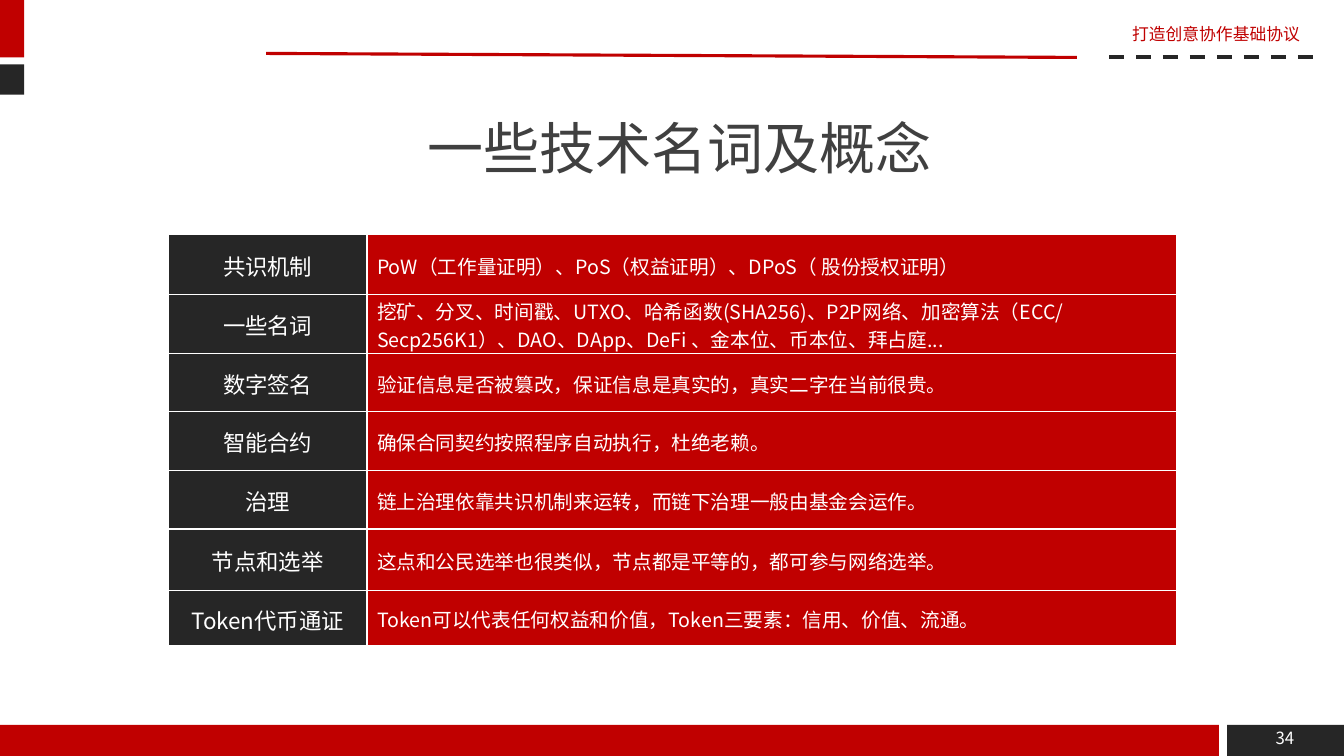
"""Build the slide of technical terms and concepts."""
from dataclasses import dataclass

import pptx
import pptx.dml.color
import pptx.enum.dml
import pptx.enum.shapes
import pptx.enum.text
import pptx.oxml
import pptx.oxml.ns
import pptx.util

Inches = pptx.util.Inches
Pt = pptx.util.Pt
Align = pptx.enum.text.PP_ALIGN
Anchor = pptx.enum.text.MSO_ANCHOR


@dataclass(frozen=True)
class Theme:
    """Hold the colours, font and type sizes."""
    red: str = "C00000"
    dark: str = "262626"
    white: str = "FFFFFF"
    title_grey: str = "404040"
    font: str = "Noto Sans CJK SC"
    title_size: int = 40
    term_size: int = 16
    detail_size: int = 14
    small_size: int = 12


THEME = Theme()
TABLE_BORDER = 0.96
COLUMN_WIDTHS = (1.97, 8.03)
ROWS = (
    (0.59, "共识机制", "PoW（工作量证明）、PoS（权益证明）、DPoS（ 股份授权证明）"),
    (0.59, "一些名词", "挖矿、分叉、时间戳、UTXO、哈希函数(SHA256)、P2P网络、加密算法"
                   "（ECC/Secp256K1）、DAO、DApp、DeFi 、金本位、币本位、拜占庭..."),
    (0.57, "数字签名", "验证信息是否被篡改，保证信息是真实的，真实二字在当前很贵。"),
    (0.59, "智能合约", "确保合同契约按照程序自动执行，杜绝老赖。"),
    (0.58, "治理", "链上治理依靠共识机制来运转，而链下治理一般由基金会运作。"),
    (0.61, "节点和选举", "这点和公民选举也很类似，节点都是平等的，都可参与网络选举。"),
    (0.55, "Token代币通证", "Token可以代表任何权益和价值，Token三要素：信用、价值、流通。"),
)


def rgb(colour):
    """Turn a hex string into a colour."""
    return pptx.dml.color.RGBColor.from_string(colour)


def write(text_frame, text, size, colour, align=Align.LEFT):
    """Write one formatted run in the first paragraph."""
    paragraph = text_frame.paragraphs[0]
    paragraph.alignment = align
    run = paragraph.add_run()
    run.text = text
    run.font.size = Pt(size)
    run.font.name = THEME.font
    run.font.color.rgb = rgb(colour)
    east_asian = pptx.oxml.parse_xml(
        f'<a:ea {pptx.oxml.ns.nsdecls("a")} typeface="{THEME.font}"/>')
    run.font._element.find(pptx.oxml.ns.qn("a:latin")).addnext(east_asian)


def add_block(slide, left, top, width, height, colour):
    """Add a plain filled rectangle."""
    shape = slide.shapes.add_shape(
        pptx.enum.shapes.MSO_SHAPE.RECTANGLE,
        Inches(left), Inches(top), Inches(width), Inches(height))
    shape.shadow.inherit = False
    shape.fill.solid()
    shape.fill.fore_color.rgb = rgb(colour)
    shape.line.fill.background()


def add_rule(slide, start, end, colour, weight, dash=None):
    """Add a straight line without shadow."""
    connector = slide.shapes.add_connector(
        pptx.enum.shapes.MSO_CONNECTOR.STRAIGHT,
        *(Inches(value) for value in (*start, *end)))
    connector.line.color.rgb = rgb(colour)
    connector.line.width = Pt(weight)
    if dash:
        connector.line.dash_style = dash
    connector._element.spPr.append(
        pptx.oxml.parse_xml(f'<a:effectLst {pptx.oxml.ns.nsdecls("a")}/>'))


def add_text(slide, left, top, width, height, text, colour,
             align=Align.LEFT, anchor=Anchor.TOP, wrap=True):
    """Add a small text box."""
    box = slide.shapes.add_textbox(
        Inches(left), Inches(top), Inches(width), Inches(height))
    box.text_frame.word_wrap = wrap
    box.text_frame.vertical_anchor = anchor
    write(box.text_frame, text, THEME.small_size, colour, align)


def set_title(slide, left, top, width, height, text):
    """Place and fill the title placeholder."""
    title = slide.shapes.title
    title.left, title.top = Inches(left), Inches(top)
    title.width, title.height = Inches(width), Inches(height)
    title.text_frame.vertical_anchor = Anchor.TOP
    title.text_frame.auto_size = pptx.enum.text.MSO_AUTO_SIZE.NONE
    write(title.text_frame, text, THEME.title_size, THEME.title_grey, Align.CENTER)


def add_borders(cell):
    """Draw a thin white border on the four sides of a cell."""
    properties = cell._tc.get_or_add_tcPr()
    for index, side in enumerate(("lnL", "lnR", "lnT", "lnB")):
        properties.insert(index, pptx.oxml.parse_xml(
            f'<a:{side} {pptx.oxml.ns.nsdecls("a")} w="{Pt(TABLE_BORDER)}">'
            f'<a:solidFill><a:srgbClr val="{THEME.white}"/></a:solidFill></a:{side}>'))


def fill_cell(cell, text, size, fill, align):
    """Fill, border and write one table cell."""
    cell.fill.solid()
    cell.fill.fore_color.rgb = rgb(fill)
    add_borders(cell)
    cell.vertical_anchor = Anchor.MIDDLE
    cell.margin_top = Inches(0.02)
    cell.margin_bottom = 0
    write(cell.text_frame, text, size, THEME.white, align)


def add_terms_table(slide, left, top):
    """Add the table of terms and explanations."""
    table = slide.shapes.add_table(
        len(ROWS), len(COLUMN_WIDTHS), Inches(left), Inches(top),
        Inches(sum(COLUMN_WIDTHS)), Inches(sum(row[0] for row in ROWS))).table
    for column, width in zip(table.columns, COLUMN_WIDTHS):
        column.width = Inches(width)
    for index, (height, term, detail) in enumerate(ROWS):
        table.rows[index].height = Inches(height)
        fill_cell(table.cell(index, 0), term, THEME.term_size, THEME.dark, Align.CENTER)
        fill_cell(table.cell(index, 1), detail, THEME.detail_size, THEME.red, Align.LEFT)


def main():
    """Build and save the slide."""
    presentation = pptx.Presentation()
    presentation.slide_width = Inches(13.33)
    presentation.slide_height = Inches(7.5)
    slide = presentation.slides.add_slide(presentation.slide_layouts[5])

    add_block(slide, 12.17, 7.19, 1.16, 0.31, THEME.dark)
    add_rule(slide, (2.64, 0.53), (10.68, 0.57), THEME.red, 2.25)
    add_rule(slide, (11, 0.57), (13.02, 0.57), THEME.dark, 2.75,
             pptx.enum.dml.MSO_LINE.DASH)
    add_text(slide, 11.13, 0.19, 1.87, 0.3, "打造创意协作基础协议", THEME.red, wrap=False)
    add_block(slide, 0, 7.19, 12.09, 0.31, THEME.red)
    add_block(slide, 0, 0, 0.24, 0.57, THEME.red)
    add_block(slide, 0, 0.64, 0.24, 0.3, THEME.dark)
    add_text(slide, 12.33, 7.12, 0.83, 0.4, "34", THEME.white,
             Align.CENTER, Anchor.MIDDLE)
    set_title(slide, 2.91, 1.08, 7.66, 0.77, "一些技术名词及概念")
    add_terms_table(slide, 1.67, 2.33)

    presentation.save("out.pptx")


if __name__ == "__main__":
    main()
